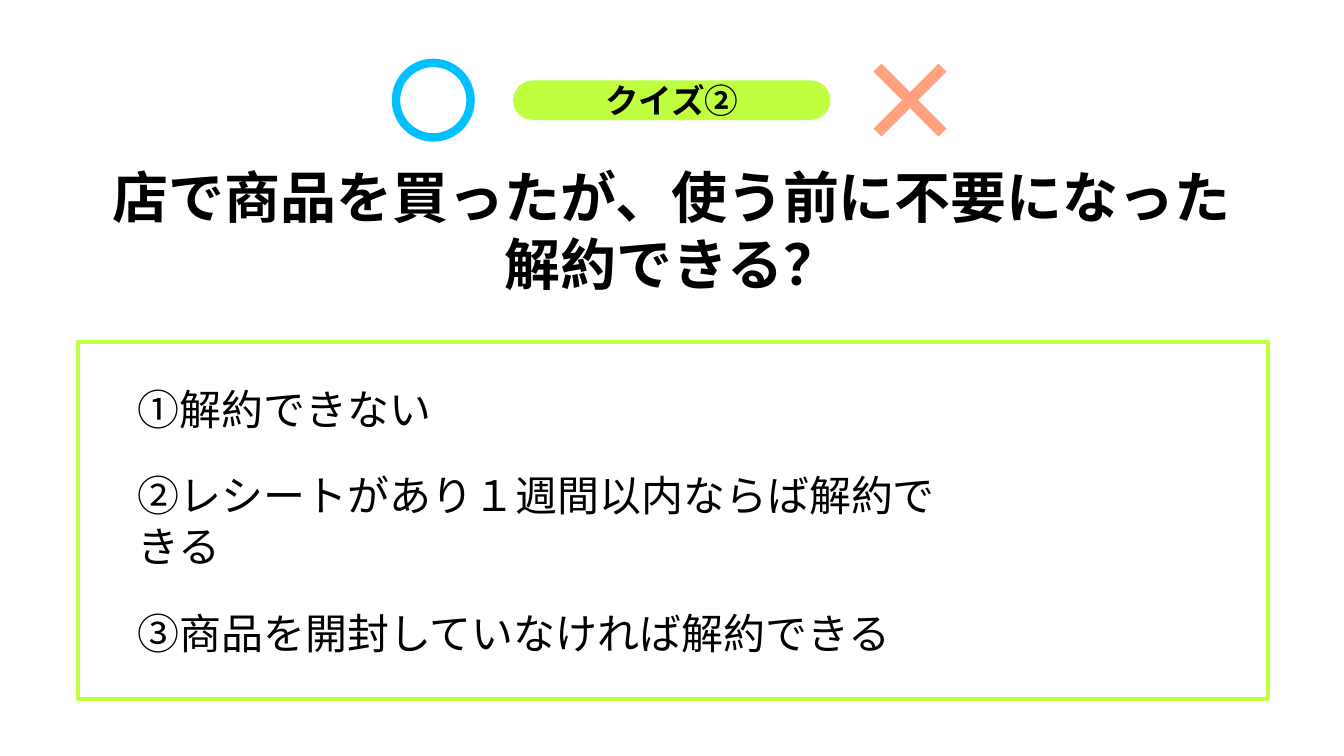
from pptx import Presentation
from pptx.dml.color import RGBColor
from pptx.enum.shapes import MSO_SHAPE
from pptx.enum.text import MSO_ANCHOR, MSO_AUTO_SIZE, PP_ALIGN
from pptx.util import Cm, Pt
from lxml.etree import SubElement
from pptx.oxml.ns import qn

FONT = "Noto Sans CJK JP"
COLORS = {"lime": "C0FF40", "blue": "00C0FF", "coral": "FFA280", "ink": "000000"}


def color(name):
    return RGBColor.from_string(COLORS[name])


def place(shape, box):
    shape.left, shape.top, shape.width, shape.height = (Cm(v) for v in box)


def draw(slide, kind, box, fill=None, line=None, width=0):
    shape = slide.shapes.add_shape(kind, *(Cm(v) for v in box))
    shape.shadow.inherit = False
    if fill:
        shape.fill.solid()
        shape.fill.fore_color.rgb = color(fill)
    else:
        shape.fill.background()
    if line:
        shape.line.color.rgb = color(line)
        shape.line.width = Pt(width)
    else:
        shape.line.fill.background()
    return shape


def write(shape, lines, size, bold=False, align=PP_ALIGN.CENTER, gap=0):
    frame = shape.text_frame
    frame.word_wrap = True
    frame.auto_size = MSO_AUTO_SIZE.NONE
    frame.vertical_anchor = MSO_ANCHOR.MIDDLE
    frame.margin_left = frame.margin_right = 0
    frame.margin_top = frame.margin_bottom = 0
    for i, line in enumerate(lines):
        para = frame.add_paragraph() if i else frame.paragraphs[0]
        para.alignment = align
        para.line_spacing = Pt(size * 1.2)
        para.space_before = Pt(gap if i else 0)
        para.space_after = Pt(0)
        run = para.add_run()
        run.text = line
        font = run.font
        font.name, font.size, font.bold = FONT, Pt(size), bold
        font.color.rgb = color("ink")
        SubElement(font._element, qn("a:ea")).set("typeface", FONT)


# Circle, quiz label and cross on one centre line
def header(slide, box, label):
    left, top, width, height = box
    mid = top + height / 2

    def row(x, w, h):
        return left + x, mid - h / 2, w, h

    draw(slide, MSO_SHAPE.OVAL, row(0, 1.88, 1.88), line="blue", width=6)
    pill = draw(slide, MSO_SHAPE.ROUNDED_RECTANGLE, row(2.95, 8, 1), fill="lime")
    pill.adjustments[0] = 0.5
    write(pill, [label], 24, bold=True)
    side = 3.15
    cross = draw(slide, MSO_SHAPE.MATH_MULTIPLY,
                 row(width - side, side, side), fill="coral")
    cross.adjustments[0] = 0.09


# Question in the title placeholder
def question(slide, box, lines):
    title = slide.shapes.title
    place(title, box)
    write(title, lines, 40, bold=True)


# Framed list of answers in the body placeholder
def answers(slide, box, lines):
    left, top, width, height = box
    draw(slide, MSO_SHAPE.RECTANGLE, box, line="lime", width=3)
    body = slide.placeholders[1]
    place(body, (left + 1.5, top, 20.8, height))
    write(body, lines, 30, align=PP_ALIGN.LEFT, gap=26)
    for para in body.text_frame.paragraphs:
        props = para._p.get_or_add_pPr()
        props.set("marL", "0")
        props.set("indent", "0")
        SubElement(props, qn("a:buNone"))


def main():
    deck = Presentation()
    deck.slide_width, deck.slide_height = Cm(33.87), Cm(19.05)
    slide = deck.slides.add_slide(deck.slide_layouts[1])
    header(slide, (9.98, 0.95, 14.53, 3.15), "クイズ②")
    question(slide, (1.93, 3.78, 30, 4),
             ["店で商品を買ったが、使う前に不要になった", "解約できる？"])
    answers(slide, (1.96, 8.61, 30, 9),
            ["①解約できない",
             "②レシートがあり１週間以内ならば解約できる",
             "③商品を開封していなければ解約できる"])
    deck.save("out.pptx")


if __name__ == "__main__":
    main()
